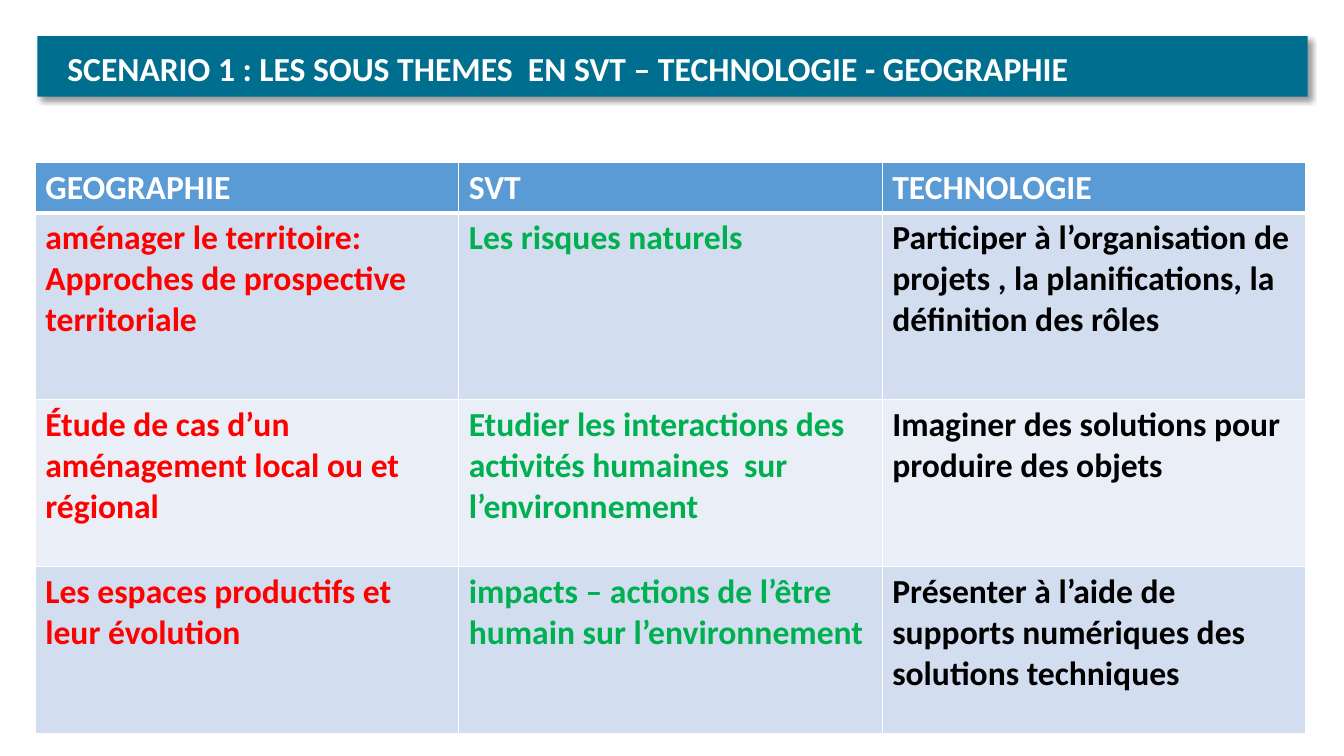
from lxml.etree import SubElement
from pptx import Presentation
from pptx.dml.color import RGBColor
from pptx.enum.shapes import MSO_SHAPE
from pptx.oxml import parse_xml
from pptx.oxml.ns import nsdecls, qn
from pptx.util import Inches, Pt

COLORS = {
    "white": "FFFFFF", "banner": "006E8E", "header": "5B9BD5",
    "band": "D2DEEF", "light_band": "EAEFF7",
    "geography": "FF0000", "science": "00B050", "technology": "000000",
}
TITLE = "SCENARIO 1 : LES SOUS THEMES  EN SVT – TECHNOLOGIE - GEOGRAPHIE"
THEMES = [
    ["GEOGRAPHIE", "SVT", "TECHNOLOGIE"],
    ["aménager le territoire:\nApproches de prospective territoriale",
     "Les risques naturels",
     "Participer à l’organisation de projets , la planifications, "
     "la définition des rôles"],
    ["Étude de cas d’un aménagement local ou et régional",
     "Etudier les interactions des activités humaines  sur l’environnement",
     "Imaginer des solutions pour produire des objets"],
    ["Les espaces productifs et leur évolution",
     "impacts – actions de l’être humain sur l’environnement",
     "Présenter à l’aide de supports numériques des solutions techniques"],
]
SUBJECT_COLORS = ["geography", "science", "technology"]
ROW_HEIGHTS = [0.44, 1.85, 1.66, 1.66]


def rgb(name):
    return RGBColor.from_string(COLORS[name])


def write(tf, text, color):
    tf.text = text
    tf.word_wrap = True
    for p in tf.paragraphs:
        for r in p.runs:
            r.font.name = "Calibri"
            r.font.size = Pt(24)
            r.font.bold = True
            r.font.color.rgb = rgb(color)


def add_shadow(sp):
    sp.shadow.inherit = False
    effects = sp._element.spPr.find(qn("a:effectLst"))
    effects.append(parse_xml(
        f'<a:outerShdw {nsdecls("a")} blurRad="{Pt(4)}" dist="{Pt(3)}" '
        'dir="2700000" algn="tl" rotWithShape="0"><a:srgbClr val="000000">'
        '<a:alpha val="40000"/></a:srgbClr></a:outerShdw>'))


def set_borders(cell, top, bottom):
    """Draw white cell borders; top and bottom are widths in points."""
    tcPr = cell._tc.get_or_add_tcPr()
    for side, width in zip("LRTB", (1, 1, top, bottom)):
        ln = SubElement(tcPr, qn(f"a:ln{side}"), w=str(Pt(width)))
        fill = SubElement(ln, qn("a:solidFill"))
        SubElement(fill, qn("a:srgbClr"), val=COLORS["white"])


def add_banner(slide, left, top, width, height):
    sp = slide.shapes.add_shape(MSO_SHAPE.RECTANGLE, Inches(left), Inches(top),
                                Inches(width), Inches(height))
    sp.fill.solid()
    sp.fill.fore_color.rgb = rgb("banner")
    sp.line.fill.background()
    add_shadow(sp)
    title = slide.shapes.add_textbox(
        Inches(left + 0.2), Inches(top + 0.07),
        Inches(width - 0.44), Inches(height - 0.12))
    write(title.text_frame, TITLE, "white")


def add_themes(slide, left, top, width):
    table = slide.shapes.add_table(
        len(THEMES), len(SUBJECT_COLORS), Inches(left), Inches(top),
        Inches(width), Inches(sum(ROW_HEIGHTS))).table
    for row, height in zip(table.rows, ROW_HEIGHTS):
        row.height = Inches(height)
    for i, texts in enumerate(THEMES):
        band = "header" if i == 0 else "band" if i % 2 else "light_band"
        for j, text in enumerate(texts):
            cell = table.cell(i, j)
            set_borders(cell, 3 if i == 1 else 1, 3 if i == 0 else 1)
            cell.fill.solid()
            cell.fill.fore_color.rgb = rgb(band)
            write(cell.text_frame, text, SUBJECT_COLORS[j] if i else "white")


def main():
    prs = Presentation()
    prs.slide_width, prs.slide_height = Inches(13.33), Inches(7.5)
    slide = prs.slides.add_slide(prs.slide_layouts[6])
    add_banner(slide, 0.37, 0.36, 12.6, 0.6)
    add_themes(slide, 0.35, 1.61, 12.6)
    prs.save("out.pptx")


if __name__ == "__main__":
    main()
